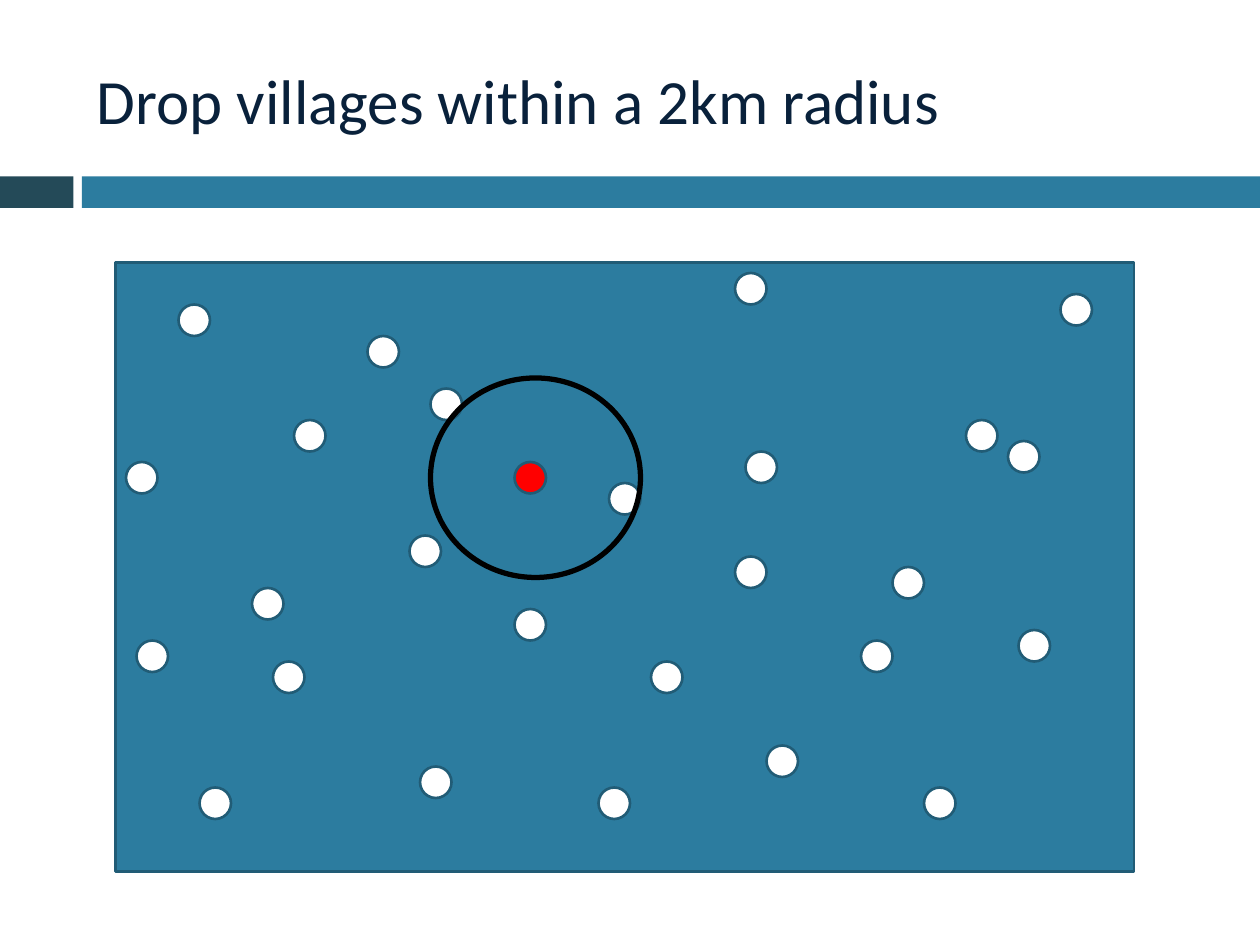
from dataclasses import dataclass

from pptx import Presentation
from pptx import util as u
from pptx.dml.color import RGBColor
from pptx.enum import shapes, text


@dataclass(frozen=True)
class Theme:
    font: str = "Calibri"
    title_size: float = 36
    title: str = "09213B"
    dark: str = "244A58"
    blue: str = "2C7C9F"
    outline: str = "215C76"
    village: str = "FFFFFF"
    chosen: str = "FF0000"
    radius: str = "000000"
    thin: float = 1.5
    thick: float = 3


class Deck:
    def __init__(self, prs, theme):
        self.theme = theme
        self.s = prs.slides.add_slide(prs.slide_layouts[5])  # title only

    def title(self, words, x, y, w, h):
        sp = self.s.shapes.title
        sp.left, sp.top, sp.width, sp.height = map(u.Pt, (x, y, w, h))
        tf = sp.text_frame
        tf.word_wrap = True
        tf.vertical_anchor = text.MSO_ANCHOR.MIDDLE
        p = tf.paragraphs[0]
        p.alignment = text.PP_ALIGN.LEFT
        r = p.add_run()
        r.text = words
        r.font.name = self.theme.font
        r.font.size = u.Pt(self.theme.title_size)
        r.font.color.rgb = RGBColor.from_string(self.theme.title)

    def shape(self, kind, x, y, w, h, fill=None, line=None, weight=None):
        sp = self.s.shapes.add_shape(kind, *map(u.Pt, (x, y, w, h)))
        sp.shadow.inherit = False
        if fill:
            sp.fill.solid()
            sp.fill.fore_color.rgb = RGBColor.from_string(fill)
        else:
            sp.fill.background()
        if line:
            sp.line.color.rgb = RGBColor.from_string(line)
            sp.line.width = u.Pt(weight or self.theme.thin)
        else:
            sp.line.fill.background()

    def rect(self, *box, **style):
        self.shape(shapes.MSO_SHAPE.RECTANGLE, *box, **style)

    def ellipse(self, *box, **style):
        self.shape(shapes.MSO_SHAPE.OVAL, *box, **style)

    def village(self, col, row, fill):
        self.ellipse(col * GRID, row * GRID, DOT, DOT,
                     fill=fill, line=self.theme.outline)


GRID = 6   # map grid step, points
DOT = 18   # village diameter, points

# Village positions (column, row) in grid steps
VILLAGES = [
    (17, 29), (28, 40), (13, 61), (101, 28), (12, 44), (85, 54), (96, 42),
    (35, 32), (19, 75), (71, 43), (70, 26), (39, 51), (41, 37), (49, 58),
    (24, 56), (49, 44), (26, 63), (82, 61), (97, 60), (58, 46), (57, 75),
    (62, 63), (40, 73), (73, 71), (70, 53), (88, 75), (92, 40),
]
CHOSEN = (49, 44)


def main():
    prs = Presentation()
    prs.slide_width, prs.slide_height = u.Pt(720), u.Pt(540)
    theme = Theme()
    deck = Deck(prs, theme)

    # Header
    deck.rect(0, 100.8, 42, 18, fill=theme.dark)
    deck.rect(46.8, 100.8, 673.2, 18, fill=theme.blue)
    deck.title("Drop villages within a 2km radius", 48, 18, 642, 78)

    # Map area
    deck.rect(66, 150, 582, 348, fill=theme.blue, line=theme.outline)

    # Villages, with the chosen one highlighted
    for spot in VILLAGES:
        deck.village(*spot, theme.chosen if spot == CHOSEN else theme.village)

    # 2km radius
    deck.ellipse(246, 216, 120, 114, line=theme.radius, weight=theme.thick)

    prs.save("out.pptx")


if __name__ == "__main__":
    main()
